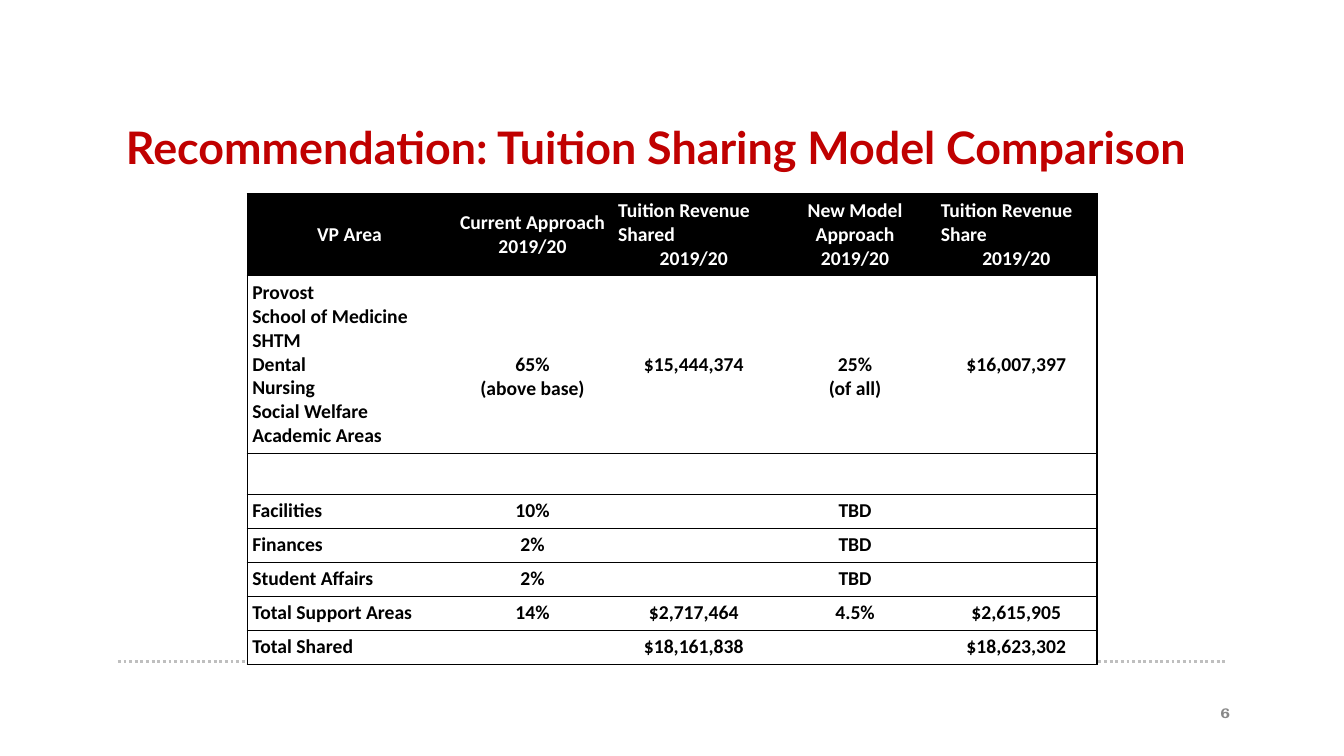
from dataclasses import dataclass

from lxml.etree import SubElement
from pptx import Presentation
from pptx.dml.color import RGBColor
from pptx.enum.dml import MSO_LINE
from pptx.enum.shapes import MSO_CONNECTOR
from pptx.enum.text import MSO_ANCHOR, MSO_AUTO_SIZE, PP_ALIGN
from pptx.oxml.ns import qn
from pptx.slide import Slide
from pptx.table import _Cell
from pptx.text.text import _Paragraph
from pptx.util import Pt


@dataclass(frozen=True)
class Theme:
    red: str = "C00000"
    black: str = "000000"
    white: str = "FFFFFF"
    grey: str = "888888"
    rule: str = "BFBFBF"
    head: str = "Lato"
    body: str = "Calibri"
    foot: str = "TeX Gyre Bonum"
    title: float = 32
    cell: float = 14
    page: float = 10
    pad: float = 3.6


@dataclass(frozen=True)
class Row:
    height: float
    texts: tuple[str, ...]
    drop: float = 0  # extra space above the figures


THEME = Theme()
LEFT, MID, RIGHT = PP_ALIGN.LEFT, PP_ALIGN.CENTER, PP_ALIGN.RIGHT
WIDTHS = (146.2, 115.2, 115.2, 115.2, 115.2)
AREAS = "\v".join(("Provost", "School of Medicine", "SHTM", "Dental",
                   "Nursing", "Social Welfare", "Academic Areas"))
HEAD = Row(58.5, ("VP Area", "Current Approach 2019/20",
                  "Tuition Revenue Shared\n2019/20",
                  "New Model Approach 2019/20",
                  "Tuition Revenue Share\n2019/20"))
ROWS = (
    HEAD,
    Row(126.8, (AREAS, "65%\n(above base)", "$15,444,374",
                "25%\n(of all)", "$16,007,397"), 51.3),
    Row(29.2, ("",) * 5),
    Row(24.3, ("Facilities", "10%", "", "TBD", "")),
    Row(24.3, ("Finances", "2%", "", "TBD", "")),
    Row(24.3, ("Student Affairs", "2%", "", "TBD", "")),
    Row(24.3, ("Total Support Areas", "14%", "$2,717,464", "4.5%", "$2,615,905")),
    Row(24.3, ("Total Shared", "", "$18,161,838", "", "$18,623,302")),
)


def style(para: _Paragraph, face: str, size: float, color: str,
          align: PP_ALIGN) -> None:
    para.alignment = align
    font = para.font
    font.name, font.size, font.bold = face, Pt(size), True
    font.color.rgb = RGBColor.from_string(color)


def edge(cell: _Cell, sides: str) -> None:
    """Draw the named sides (L, R, T, B) and clear the others."""
    props = cell._tc.get_or_add_tcPr()
    for spot, side in enumerate("LRTB"):
        line = SubElement(props, qn(f"a:ln{side}"), w=str(Pt(1)))
        props.insert(spot, line)
        if side in sides:
            fill = SubElement(line, qn("a:solidFill"))
            SubElement(fill, qn("a:srgbClr"), val=THEME.black)
        else:
            SubElement(line, qn("a:noFill"))


def add_title(slide: Slide) -> None:
    title = slide.shapes.title
    title.left, title.top, title.width, title.height = (
        Pt(90), Pt(95.76), Pt(822.96), Pt(56.16))
    frame = title.text_frame
    frame.margin_left = frame.margin_right = 0
    frame.margin_top = frame.margin_bottom = 0
    frame.vertical_anchor = MSO_ANCHOR.TOP
    frame.auto_size = MSO_AUTO_SIZE.NONE
    frame.text = "Recommendation: Tuition Sharing Model Comparison"
    para = frame.paragraphs[0]
    para.line_spacing = 0.7
    para.space_before = Pt(0)
    style(para, THEME.head, THEME.title, THEME.red, LEFT)


def add_rule(slide: Slide) -> None:
    rule = slide.shapes.add_connector(
        MSO_CONNECTOR.STRAIGHT, Pt(84.24), Pt(472.3), Pt(876.24), Pt(472.3))
    rule.line.color.rgb = RGBColor.from_string(THEME.rule)
    rule.line.width = Pt(2)
    rule.line.dash_style = MSO_LINE.ROUND_DOT
    SubElement(rule._element.spPr, qn("a:effectLst"))


def fill_cell(cell: _Cell, row: Row, col: int) -> None:
    top = row is HEAD
    cell.margin_left = cell.margin_right = Pt(THEME.pad)
    cell.margin_bottom = Pt(THEME.pad)
    cell.margin_top = Pt(THEME.pad + (row.drop if col else 0))
    cell.vertical_anchor = MSO_ANCHOR.MIDDLE if top else MSO_ANCHOR.TOP
    cell.fill.solid()
    cell.fill.fore_color.rgb = RGBColor.from_string(
        THEME.black if top else THEME.white)
    cell.text = row.texts[col]
    paras = cell.text_frame.paragraphs
    for para in paras:
        # Split headings start at the left, with the year centred below
        split = top and len(paras) > 1 and para.text == paras[0].text
        align = LEFT if split or (col == 0 and not top) else MID
        style(para, THEME.body, THEME.cell,
              THEME.white if top else THEME.black, align)
    ends = {0: "L", len(WIDTHS) - 1: "R"}
    edge(cell, "TB" + ends.get(col, ""))


def add_grid(slide: Slide) -> None:
    frame = slide.shapes.add_table(
        len(ROWS), len(WIDTHS), Pt(176.6), Pt(138.5),
        Pt(sum(WIDTHS)), Pt(sum(row.height for row in ROWS)))
    table = frame.table
    table.first_row = table.horz_banding = False
    for col, width in enumerate(WIDTHS):
        table.columns[col].width = Pt(width)
    for num, row in enumerate(ROWS):
        table.rows[num].height = Pt(row.height)
        for col in range(len(WIDTHS)):
            fill_cell(table.cell(num, col), row, col)


def add_page(slide: Slide) -> None:
    box = slide.shapes.add_textbox(Pt(868.32), Pt(499.68), Pt(13.68), Pt(19.44))
    frame = box.text_frame
    frame.margin_left = frame.margin_right = Pt(THEME.pad)
    frame.margin_top = frame.margin_bottom = Pt(THEME.pad)
    frame.word_wrap = False
    frame.auto_size = MSO_AUTO_SIZE.SHAPE_TO_FIT_TEXT
    frame.vertical_anchor = MSO_ANCHOR.MIDDLE
    frame.text = "6"
    style(frame.paragraphs[0], THEME.foot, THEME.page, THEME.grey, RIGHT)


def main() -> None:
    deck = Presentation()
    deck.slide_width, deck.slide_height = Pt(960), Pt(540)
    slide = deck.slides.add_slide(deck.slide_layouts[5])
    add_rule(slide)
    add_title(slide)
    add_grid(slide)
    add_page(slide)
    deck.save("out.pptx")


if __name__ == "__main__":
    main()
